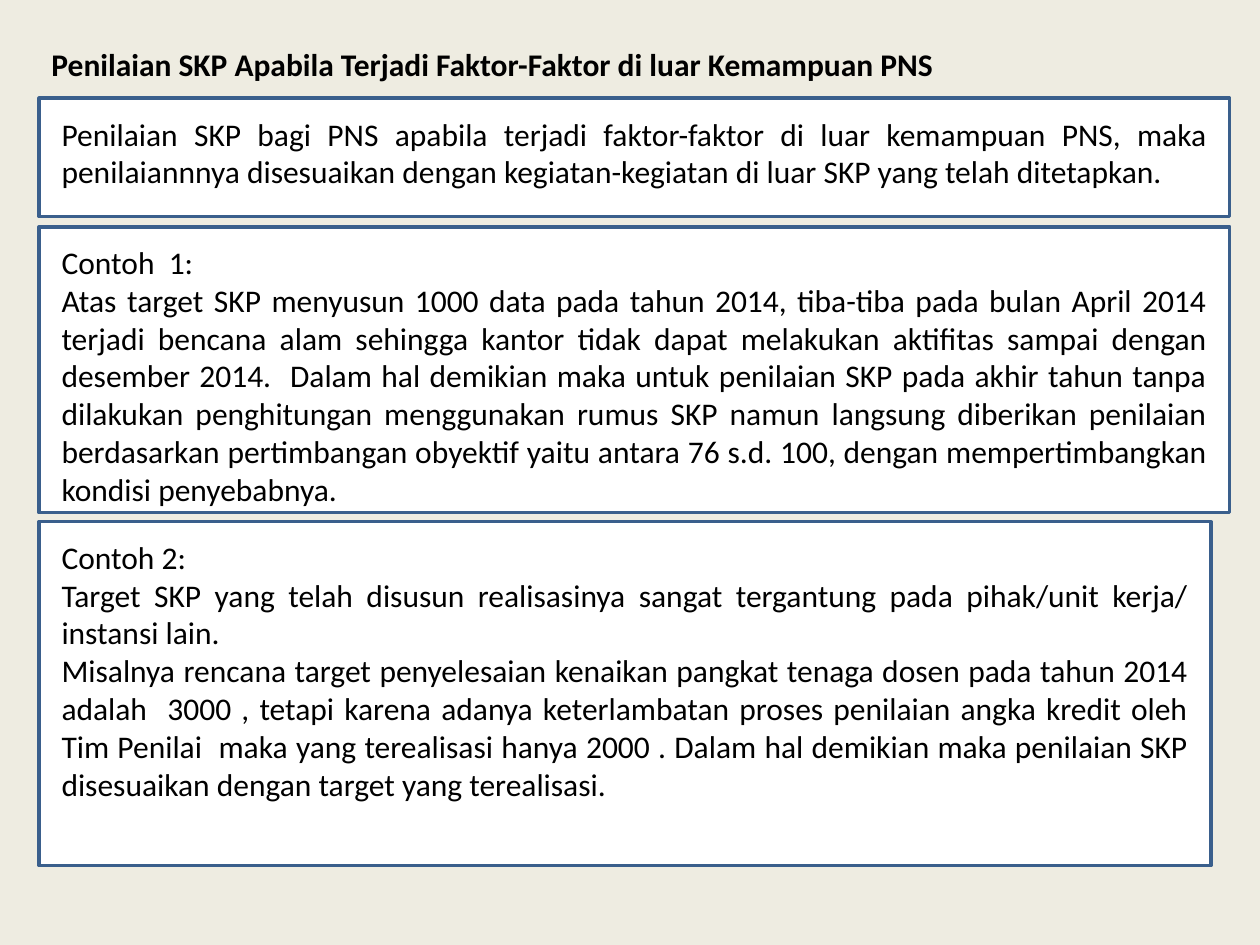
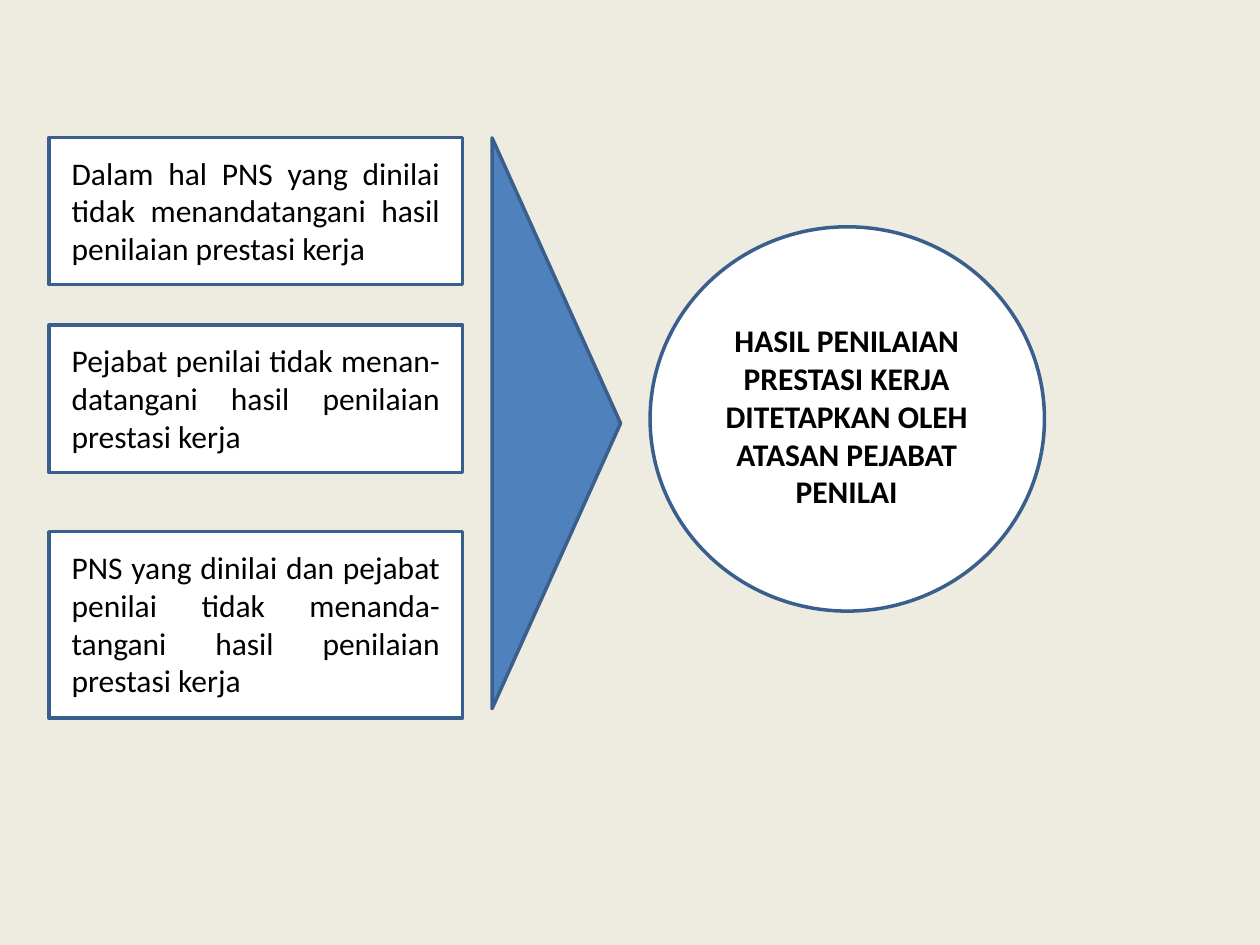
import pptx
import pptx.util
import pptx.dml.color
import pptx.enum.shapes
import pptx.enum.text

Inches = pptx.util.Inches
RGBColor = pptx.dml.color.RGBColor
Shape = pptx.enum.shapes.MSO_SHAPE
Align = pptx.enum.text.PP_ALIGN

CREAM = RGBColor(0xEE, 0xEC, 0xE1)
WHITE = RGBColor(0xFF, 0xFF, 0xFF)
BLACK = RGBColor(0x00, 0x00, 0x00)
BLUE = RGBColor(0x4F, 0x81, 0xBD)
NAVY = RGBColor(0x3A, 0x5F, 0x8C)
FONT = "Calibri"
SIZE = 18
INSET = 0.08

TITLE = "Penilaian SKP Apabila Terjadi Faktor-Faktor di luar Kemampuan PNS"
RULE = [
    "Penilaian SKP bagi PNS apabila terjadi faktor-faktor di luar kemampuan PNS, "
    "maka penilaiannnya disesuaikan dengan kegiatan-kegiatan di luar SKP yang "
    "telah ditetapkan.",
]
FIRST = [
    "Contoh  1:",
    "Atas target SKP menyusun 1000 data pada tahun 2014, tiba-tiba pada bulan "
    "April 2014 terjadi bencana alam sehingga kantor tidak dapat melakukan "
    "aktifitas sampai dengan desember 2014.  Dalam hal demikian maka untuk "
    "penilaian SKP pada akhir tahun tanpa dilakukan penghitungan menggunakan "
    "rumus SKP namun langsung diberikan penilaian berdasarkan pertimbangan "
    "obyektif yaitu antara 76 s.d. 100, dengan mempertimbangkan kondisi "
    "penyebabnya.",
]
SECOND = [
    "Contoh 2:",
    "Target SKP yang telah disusun realisasinya sangat tergantung pada "
    "pihak/unit kerja/ instansi lain.",
    "Misalnya rencana target penyelesaian kenaikan pangkat tenaga dosen pada "
    "tahun 2014 adalah  3000 , tetapi karena adanya keterlambatan proses "
    "penilaian angka kredit oleh Tim Penilai  maka yang terealisasi hanya 2000 . "
    "Dalam hal demikian maka penilaian SKP disesuaikan dengan target yang "
    "terealisasi.",
]
CASES = [
    (1.09, 1.17, "Dalam hal PNS yang dinilai tidak menandatangani hasil "
                 "penilaian prestasi kerja"),
    (2.58, 1.17, "Pejabat penilai tidak menan-datangani hasil penilaian "
                 "prestasi kerja"),
    (4.22, 1.48, "PNS yang dinilai dan pejabat penilai tidak menanda-tangani "
                 "hasil penilaian prestasi kerja"),
]
RESULT = "HASIL PENILAIAN PRESTASI KERJA DITETAPKAN OLEH ATASAN PEJABAT PENILAI"


def add_slide(deck):
    slide = deck.slides.add_slide(deck.slide_layouts[6])
    slide.background.fill.solid()
    slide.background.fill.fore_color.rgb = CREAM
    return slide


def add_form(slide, kind, left, top, width, height, color=WHITE):
    form = slide.shapes.add_shape(
        kind, Inches(left), Inches(top), Inches(width), Inches(height))
    form.shadow.inherit = False
    form.fill.solid()
    form.fill.fore_color.rgb = color
    form.line.color.rgb = NAVY
    form.line.width = pptx.util.Pt(2)
    return form


def add_text(slide, left, top, width, height, lines, align, bold=False):
    box = slide.shapes.add_textbox(
        Inches(left), Inches(top), Inches(width), Inches(height))
    frame = box.text_frame
    frame.word_wrap = True
    for index, line in enumerate(lines):
        para = frame.add_paragraph() if index else frame.paragraphs[0]
        para.alignment = align
        run = para.add_run()
        run.text = line
        run.font.name = FONT
        run.font.size = pptx.util.Pt(SIZE)
        run.font.bold = bold
        run.font.color.rgb = BLACK


def add_panel(slide, left, top, width, height, lines):
    add_form(slide, Shape.RECTANGLE, left, top, width, height)
    add_text(slide, left + INSET, top + INSET, width - 2 * INSET,
             height - 2 * INSET, lines, Align.JUSTIFY)


def add_factors(deck):
    slide = add_slide(deck)
    add_text(slide, 0.31, 0.31, 9.38, 0.4, [TITLE], Align.LEFT, True)
    add_panel(slide, 0.31, 0.78, 9.45, 0.94, RULE)
    add_panel(slide, 0.31, 1.8, 9.45, 2.27, FIRST)
    add_panel(slide, 0.31, 4.14, 9.3, 2.73, SECOND)


def add_result(deck):
    slide = add_slide(deck)
    for top, height, case in CASES:
        add_panel(slide, 0.39, top, 3.28, height, [case])
    wedge = add_form(slide, Shape.ISOSCELES_TRIANGLE, 2.15, 2.85, 4.53, 1.02, BLUE)
    wedge.rotation = 90
    add_form(slide, Shape.OVAL, 5.16, 1.8, 3.13, 3.05)
    add_text(slide, 5.55, 2.5, 2.34, 1.62, [RESULT], Align.CENTER, True)


def main():
    deck = pptx.Presentation()
    deck.slide_width = Inches(10)
    deck.slide_height = Inches(7.5)
    add_factors(deck)
    add_result(deck)
    deck.save("out.pptx")


if __name__ == "__main__":
    main()
